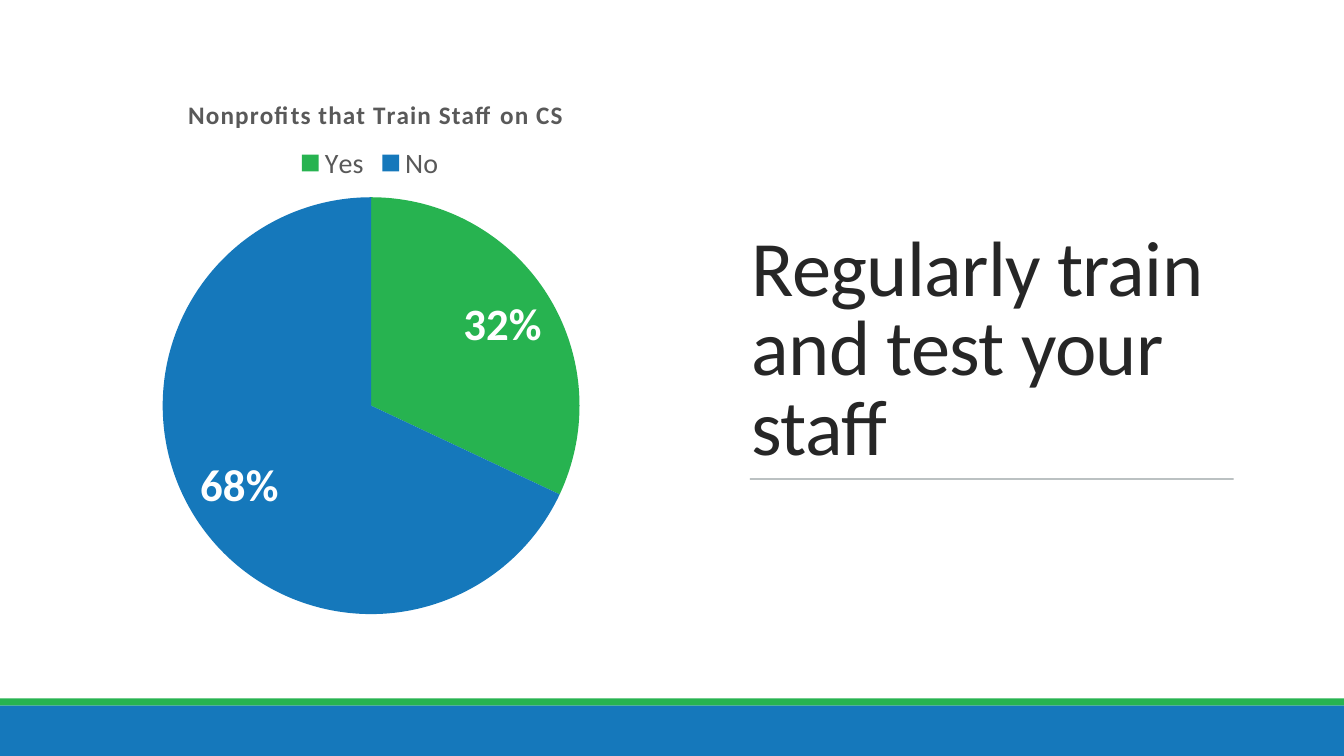
"""Build a slide with a pie chart of nonprofits that train their staff."""
from dataclasses import dataclass

from lxml import etree
from pptx import Presentation
from pptx.chart.data import CategoryChartData
from pptx.dml.color import RGBColor
from pptx.enum.chart import XL_CHART_TYPE, XL_LABEL_POSITION, XL_LEGEND_POSITION
from pptx.enum.shapes import MSO_CONNECTOR, MSO_SHAPE
from pptx.enum.text import MSO_ANCHOR, MSO_AUTO_SIZE, PP_ALIGN
from pptx.oxml.ns import qn
from pptx.util import Cm, Pt

PIE = XL_CHART_TYPE.PIE
INSIDE_END = XL_LABEL_POSITION.INSIDE_END
LEGEND_TOP = XL_LEGEND_POSITION.TOP
STRAIGHT = MSO_CONNECTOR.STRAIGHT
RECTANGLE = MSO_SHAPE.RECTANGLE
BOTTOM = MSO_ANCHOR.BOTTOM
NO_AUTOFIT = MSO_AUTO_SIZE.NONE
LEFT = PP_ALIGN.LEFT

FONT = "Calibri"
WIDTH, HEIGHT = 33.87, 19.05
COLORS = {
    "green": "27B350",
    "blue": "1578BB",
    "title": "262626",
    "grey": "595959",
    "rule": "2C3C43",
    "white": "FFFFFF",
}


@dataclass
class Band:
    top: float
    height: float
    color: str


@dataclass
class Slice:
    label: str
    value: int
    color: str


BANDS = [Band(17.6, 0.18, "green"), Band(17.78, 1.27, "blue")]
SLICES = [Slice("Yes", 32, "green"), Slice("No", 68, "blue")]


def rgb(name: str) -> RGBColor:
    return RGBColor.from_string(COLORS[name])


def set_font(font, size: float, color: str, bold: bool = False) -> None:
    font.name = FONT
    font.size = Pt(size)
    font.bold = bold
    font.color.rgb = rgb(color)


def set_layout(element, index: int, **values: float) -> None:
    for old in element.findall(qn("c:layout")):
        element.remove(old)
    layout = etree.Element(qn("c:layout"))
    manual = etree.SubElement(layout, qn("c:manualLayout"))
    if "w" in values:
        etree.SubElement(manual, qn("c:layoutTarget")).set("val", "inner")
    for mode in ("xMode", "yMode"):
        etree.SubElement(manual, qn(f"c:{mode}")).set("val", "edge")
    for name, value in values.items():
        etree.SubElement(manual, qn(f"c:{name}")).set("val", str(value))
    element.insert(index, layout)


def add_band(slide, band: Band) -> None:
    sp = slide.shapes.add_shape(
        RECTANGLE, 0, Cm(band.top), Cm(WIDTH), Cm(band.height))
    sp.shadow.inherit = False
    sp.fill.solid()
    sp.fill.fore_color.rgb = rgb(band.color)
    sp.line.fill.background()


def add_title(slide, text: str) -> None:
    sp = slide.shapes.title
    sp.left, sp.top, sp.width, sp.height = Cm(18.69), Cm(1.78), Cm(13.36), Cm(10.24)
    tf = sp.text_frame
    tf.text = text
    tf.word_wrap = True
    tf.auto_size = NO_AUTOFIT
    tf.vertical_anchor = BOTTOM
    p = tf.paragraphs[0]
    p.alignment = LEFT
    p.line_spacing = 0.85
    set_font(p.font, 56, "title")
    p.runs[0].font._element.set("spc", "-50")


def add_rule(slide) -> None:
    line = slide.shapes.add_connector(
        STRAIGHT, Cm(18.9), Cm(12.07), Cm(31.09), Cm(12.07))
    line.line.width = Pt(0.5)
    line.line.color.rgb = rgb("rule")
    props = line._element.spPr
    color = props.find(f".//{qn('a:srgbClr')}")
    etree.SubElement(color, qn("a:alpha")).set("val", "90000")
    etree.SubElement(props, qn("a:effectLst"))


def add_pie(slide, title: str) -> None:
    data = CategoryChartData()
    data.categories = [s.label for s in SLICES]
    data.add_series("Series 1", [s.value for s in SLICES])
    chart = slide.shapes.add_chart(
        PIE, Cm(1.75), Cm(1.78), Cm(15.16), Cm(14.05), data).chart
    chart.font.name = FONT
    chart.font.size = Pt(10)

    chart.has_title = True
    tf = chart.chart_title.text_frame
    tf.text = title
    p = tf.paragraphs[0]
    set_font(p.font, 18, "grey", bold=True)
    p.font._element.set("spc", "80")
    set_layout(chart.chart_title._element, 1, x=0.19, y=0.04)

    chart.has_legend = True
    legend = chart.legend
    legend.position = LEGEND_TOP
    legend.include_in_layout = False
    set_font(legend.font, 20, "grey")

    plot = chart.plots[0]
    plot.vary_by_categories = True
    set_layout(plot._element.getparent(), 0, x=0.155, y=0.227, w=0.693, h=0.748)
    series = plot.series[0]
    for i, s in enumerate(SLICES):
        fill = series.points[i].format.fill
        fill.solid()
        fill.fore_color.rgb = rgb(s.color)
    labels = series.data_labels
    labels.show_percentage = True
    labels.show_value = False
    labels.number_format = "0%"
    labels.number_format_is_linked = False
    labels.position = INSIDE_END
    set_font(labels.font, 32, "white", bold=True)


def main() -> None:
    prs = Presentation()
    prs.slide_width, prs.slide_height = Cm(WIDTH), Cm(HEIGHT)
    slide = prs.slides.add_slide(prs.slide_layouts[5])
    add_title(slide, "Regularly train and test your staff")
    add_rule(slide)
    for band in BANDS:
        add_band(slide, band)
    add_pie(slide, "Nonprofits that Train Staff on CS")
    prs.save("out.pptx")


if __name__ == "__main__":
    main()
